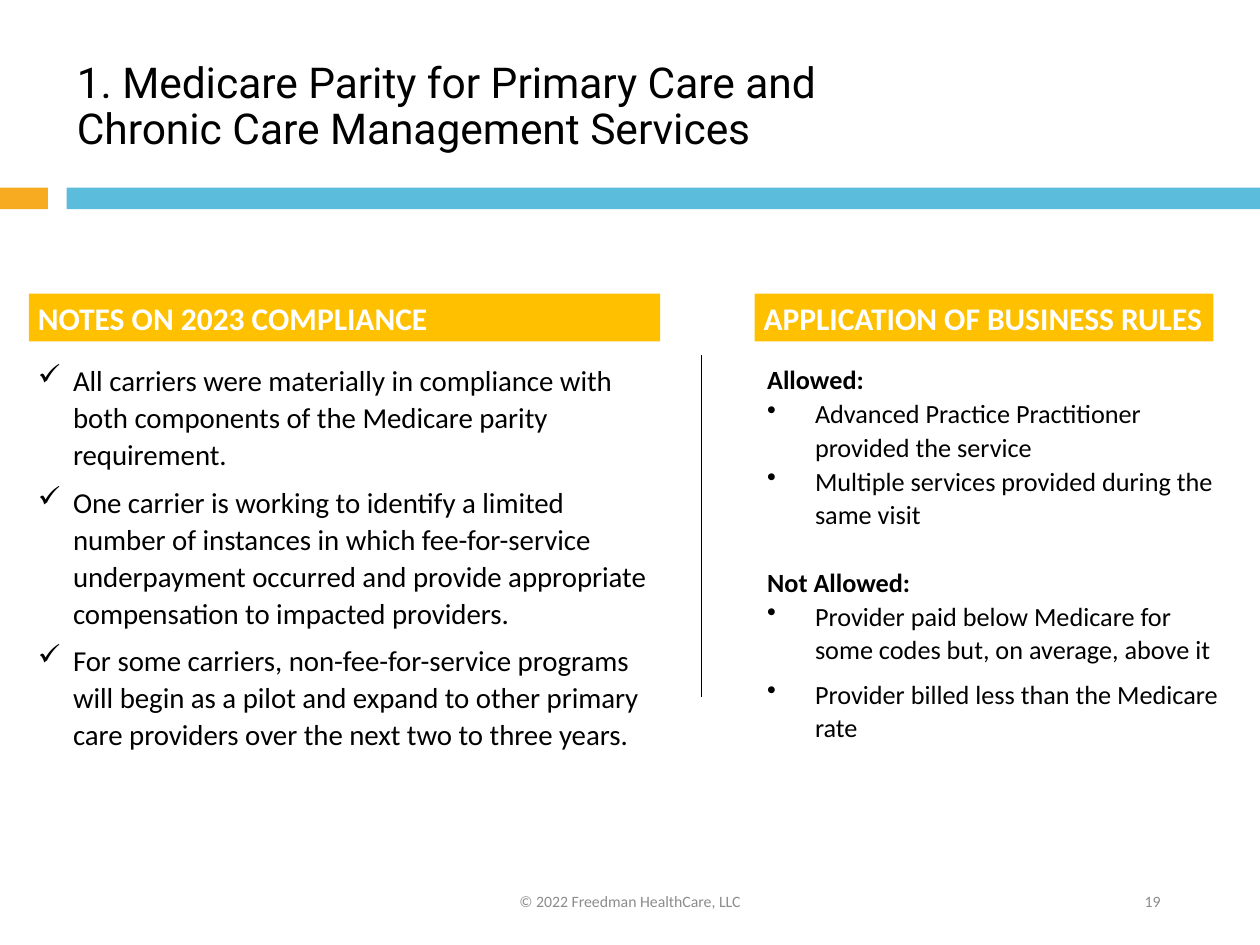
"""Build the slide on parity compliance notes and business rules."""
import pptx
import pptx.util
import pptx.dml.color
import pptx.enum.shapes
import pptx.enum.text
import pptx.oxml
import pptx.oxml.ns

Inches, Pt = pptx.util.Inches, pptx.util.Pt
ALIGN = pptx.enum.text.PP_ALIGN
MIDDLE = pptx.enum.text.MSO_ANCHOR.MIDDLE
RECT = pptx.enum.shapes.MSO_SHAPE.RECTANGLE
COLORS = {"orange": "F7AB21", "blue": "5BBDDB", "gold": "FFC000",
          "black": "000000", "white": "FFFFFF", "gray": "8C8C8C"}


def style(para, size, color="black", bold=False, face="Calibri"):
    for run in para.runs:
        run.font.size = Pt(size)
        run.font.name = face
        run.font.bold = bold
        run.font.color.rgb = pptx.dml.color.RGBColor.from_string(COLORS[color])


def bullet(para, mark, indent):
    props = para._p.get_or_add_pPr()
    props.set("marL", str(Inches(indent)))
    props.set("indent", str(-Inches(indent)))
    char = pptx.oxml.parse_xml(
        f'<a:buChar {pptx.oxml.ns.nsdecls("a")} char="{mark}"/>')
    props.append(char)


deck = pptx.Presentation()
deck.slide_width, deck.slide_height = Inches(10), Inches(7.5)
slide = deck.slides.add_slide(deck.slide_layouts[5])
shapes = slide.shapes

title = shapes.title
title.left, title.top = Inches(0.51), Inches(0.31)
title.width, title.height = Inches(6.55), Inches(1.09)
frame = title.text_frame
frame.text = "1. Medicare Parity for Primary Care and Chronic Care Management Services"
frame.word_wrap = True
frame.auto_size = pptx.enum.text.MSO_AUTO_SIZE.NONE
frame.vertical_anchor = MIDDLE
head = frame.paragraphs[0]
head.alignment = ALIGN.LEFT
head.line_spacing = 0.9
style(head, 24.3, face="Roboto")

bars = [
    (0, 1.49, 0.38, 0.17, "orange", ""),
    (0.53, 1.49, 9.47, 0.17, "blue", ""),
    (0.23, 2.33, 5.01, 0.38, "gold", "NOTES ON 2023 COMPLIANCE"),
    (5.99, 2.33, 3.64, 0.38, "gold", "APPLICATION OF BUSINESS RULES"),
]
for left, top, width, height, color, label in bars:
    bar = shapes.add_shape(RECT, Inches(left), Inches(top), Inches(width), Inches(height))
    bar.shadow.inherit = False
    bar.fill.solid()
    bar.fill.fore_color.rgb = pptx.dml.color.RGBColor.from_string(COLORS[color])
    bar.line.fill.background()
    if label:
        frame = bar.text_frame
        frame.text = label
        frame.word_wrap = True
        frame.vertical_anchor = pptx.enum.text.MSO_ANCHOR.TOP
        frame.margin_left = frame.margin_right = Inches(0.07)
        frame.margin_top = frame.margin_bottom = Inches(0.04)
        frame.paragraphs[0].alignment = ALIGN.LEFT
        style(frame.paragraphs[0], 18, "white", True)

notes = [
    "All carriers were materially in compliance with both components of the Medicare parity requirement.",
    "One carrier is working to identify a limited number of instances in which fee-for-service "
    "underpayment occurred and provide appropriate compensation to impacted providers.",
    "For some carriers, non-fee-for-service programs will begin as a pilot and expand to other "
    "primary care providers over the next two to three years.",
]
box = shapes.add_textbox(Inches(0.23), Inches(2.82), Inches(5.07), Inches(3.53))
frame = box.text_frame
frame.word_wrap = True
frame.margin_left = frame.margin_right = Inches(0.07)
frame.margin_top = frame.margin_bottom = Inches(0.04)
frame.text = "\n".join(notes)
for para in frame.paragraphs:
    bullet(para, "✓", 0.28)
    para.line_spacing = 1.07
    para.space_after = Pt(6)
    style(para, 16.5)

rules = [
    ("Allowed:", True, 0, 0),
    ("Advanced Practice Practitioner provided the service", False, 0, 0),
    ("Multiple services provided during the same visit", False, 0, 0),
    ("Not Allowed:", True, 19.5, 0),
    ("Provider paid below Medicare for some codes but, on average, above it", False, 0, 6),
    ("Provider billed less than the Medicare rate", False, 0, 0),
]
box = shapes.add_textbox(Inches(5.99), Inches(2.82), Inches(3.78), Inches(3.41))
frame = box.text_frame
frame.word_wrap = True
frame.text = "\n".join(rule[0] for rule in rules)
for para, (text, bold, before, after) in zip(frame.paragraphs, rules):
    if not bold:
        bullet(para, "•", 0.38)
    para.line_spacing = 1.07
    if before:
        para.space_before = Pt(before)
    if after:
        para.space_after = Pt(after)
    style(para, 15, bold=bold)

rule = shapes.add_connector(pptx.enum.shapes.MSO_CONNECTOR.STRAIGHT,
                            Inches(5.57), Inches(2.82), Inches(5.57), Inches(5.53))
rule.line.width = Pt(0.5)
rule.line.color.rgb = pptx.dml.color.RGBColor.from_string(COLORS["black"])
rule._element.spPr.append(
    pptx.oxml.parse_xml(f'<a:effectLst {pptx.oxml.ns.nsdecls("a")}/>'))

footers = [
    (3.31, 3.38, ALIGN.CENTER, "© 2022 Freedman HealthCare, LLC"),
    (7.06, 2.25, ALIGN.RIGHT, "19"),
]
for left, width, align, text in footers:
    box = shapes.add_textbox(Inches(left), Inches(6.95), Inches(width), Inches(0.4))
    frame = box.text_frame
    frame.text = text
    frame.word_wrap = True
    frame.vertical_anchor = MIDDLE
    frame.paragraphs[0].alignment = align
    style(frame.paragraphs[0], 9, "gray")

deck.save("out.pptx")
